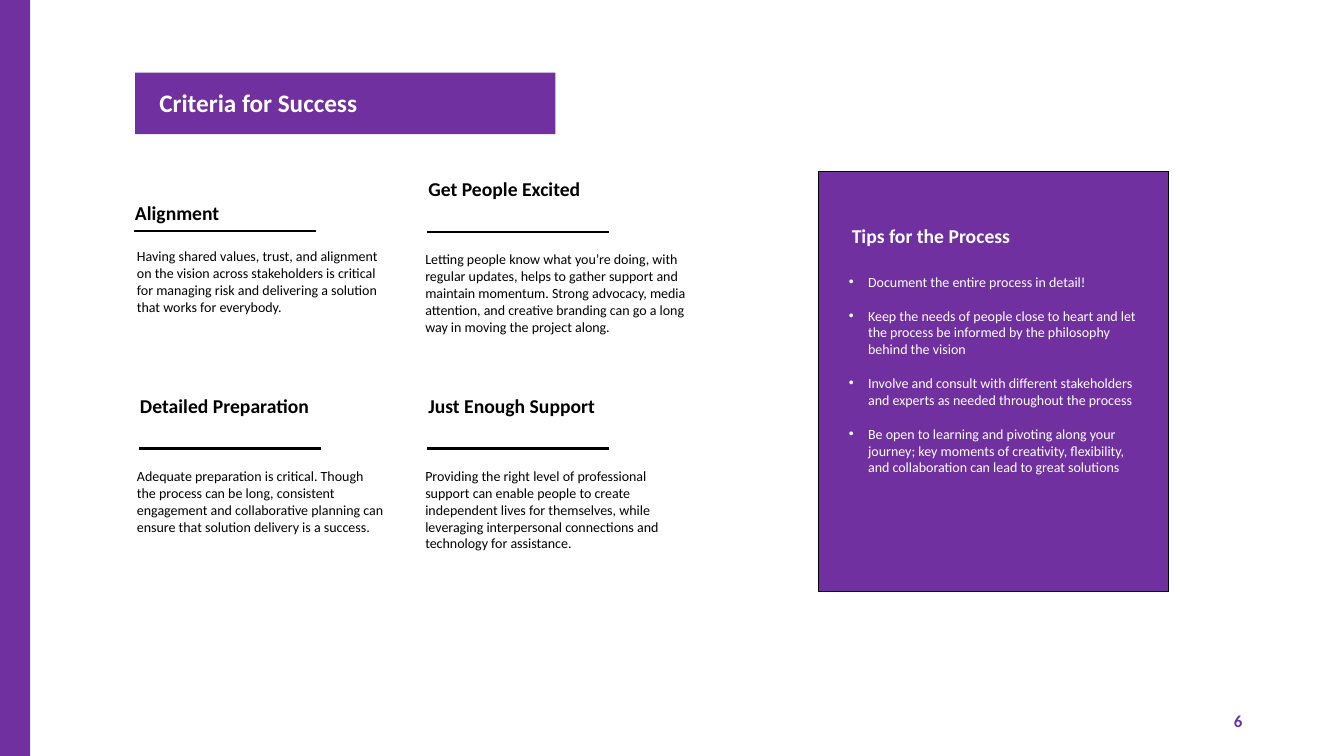
from dataclasses import dataclass

from lxml import etree
from pptx import Presentation
from pptx.dml.color import RGBColor
from pptx.enum.shapes import MSO_CONNECTOR, MSO_SHAPE
from pptx.enum.text import MSO_ANCHOR, MSO_AUTO_SIZE, PP_ALIGN
from pptx.oxml.ns import qn
from pptx.util import Pt

STRAIGHT = MSO_CONNECTOR.STRAIGHT
RECTANGLE = MSO_SHAPE.RECTANGLE
TOP, MIDDLE = MSO_ANCHOR.TOP, MSO_ANCHOR.MIDDLE
NO_FIT = MSO_AUTO_SIZE.NONE
LEFT, RIGHT = PP_ALIGN.LEFT, PP_ALIGN.RIGHT

PURPLE = RGBColor(0x70, 0x30, 0xA0)
WHITE = RGBColor(0xFF, 0xFF, 0xFF)
BLACK = RGBColor(0x00, 0x00, 0x00)

FONT = "Calibri"
EMU_PER_PX = 9144
RULE_LENGTH = 180
BULLET_INDENT = 19


@dataclass(frozen=True)
class Box:
    left: int
    top: int
    width: int
    height: int

    def emu(self) -> tuple[int, int, int, int]:
        return px(self.left), px(self.top), px(self.width), px(self.height)


@dataclass(frozen=True)
class Criterion:
    heading: str
    heading_box: Box
    rule_left: int
    rule_top: int
    detail: str
    detail_box: Box


CRITERIA = [
    Criterion(
        "Alignment", Box(124, 194, 200, 77), 133, 229,
        "Having shared values, trust, and alignment on the vision across "
        "stakeholders is critical for managing risk and delivering a solution "
        "that works for everybody.",
        Box(126, 241, 265, 94)),
    Criterion(
        "Get People Excited", Box(415, 171, 188, 57), 424, 230,
        "Letting people know what you’re doing, with regular updates, helps to "
        "gather support and maintain momentum. Strong advocacy, media "
        "attention, and creative branding can go a long way in moving the "
        "project along.",
        Box(412, 244, 286, 128)),
    Criterion(
        "Detailed Preparation", Box(129, 386, 200, 101), 138, 445,
        "Adequate preparation is critical. Though the process can be long, "
        "consistent engagement and collaborative planning can ensure that "
        "solution delivery is a success.",
        Box(126, 459, 265, 94)),
    Criterion(
        "Just Enough Support", Box(415, 386, 200, 101), 424, 445,
        "Providing the right level of professional support can enable people "
        "to create independent lives for themselves, while leveraging "
        "interpersonal connections and technology for assistance.",
        Box(412, 459, 286, 111)),
]

TIPS = [
    "Document the entire process in detail!",
    "Keep the needs of people close to heart and let the process be informed "
    "by the philosophy behind the vision",
    "Involve and consult with different stakeholders and experts as needed "
    "throughout the process",
    "Be open to learning and pivoting along your journey; key moments of "
    "creativity, flexibility, and collaboration can lead to great solutions",
]


def px(length: int) -> int:
    return length * EMU_PER_PX


def add_bullet(paragraph) -> None:
    properties = paragraph._p.get_or_add_pPr()
    properties.set("marL", str(px(BULLET_INDENT)))
    properties.set("indent", str(-px(BULLET_INDENT)))
    etree.SubElement(properties, qn("a:buFont")).set("typeface", "Arial")
    etree.SubElement(properties, qn("a:buChar")).set("char", "•")


def write_text(holder, lines: list[str], *, size: int, color: RGBColor = BLACK,
               bold: bool = False, align=LEFT, anchor=TOP,
               bulleted: bool = False, gap: float = 0) -> None:
    frame = holder.text_frame
    frame.word_wrap = True
    frame.auto_size = NO_FIT
    frame.vertical_anchor = anchor
    for index, line in enumerate(lines):
        paragraph = frame.add_paragraph() if index else frame.paragraphs[0]
        if bulleted:
            add_bullet(paragraph)
        paragraph.alignment = align
        paragraph.space_before = Pt(gap if index else 0)
        run = paragraph.add_run()
        run.text = line
        run.font.name = FONT
        run.font.size = Pt(size)
        run.font.bold = bold
        run.font.color.rgb = color


def add_panel(slide, box: Box, outlined: bool = False) -> None:
    panel = slide.shapes.add_shape(RECTANGLE, *box.emu())
    panel.shadow.inherit = False
    panel.fill.solid()
    panel.fill.fore_color.rgb = PURPLE
    if outlined:
        panel.line.color.rgb = BLACK
        panel.line.width = Pt(1)
    else:
        panel.line.fill.background()


def add_rule(slide, left: int, top: int) -> None:
    rule = slide.shapes.add_connector(
        STRAIGHT, px(left), px(top), px(left + RULE_LENGTH), px(top))
    rule.line.color.rgb = BLACK
    rule.line.width = Pt(1.75)
    etree.SubElement(rule.element.spPr, qn("a:effectLst"))


def add_label(slide, box: Box, text: str, **text_format) -> None:
    write_text(slide.shapes.add_textbox(*box.emu()), [text], **text_format)


def place_on_top(slide, placeholder, box: Box) -> None:
    (placeholder.left, placeholder.top,
     placeholder.width, placeholder.height) = box.emu()
    slide.shapes.element.append(placeholder.element)


def add_criterion(slide, criterion: Criterion) -> None:
    add_label(slide, criterion.heading_box, criterion.heading, size=14, bold=True)
    add_rule(slide, criterion.rule_left, criterion.rule_top)
    add_label(slide, criterion.detail_box, criterion.detail, size=10)


def main() -> None:
    deck = Presentation()
    deck.slide_width, deck.slide_height = px(1333), px(750)
    slide = deck.slides.add_slide(deck.slide_layouts[1])
    title, tips = slide.shapes.title, slide.placeholders[1]

    add_panel(slide, Box(134, 72, 417, 61))
    place_on_top(slide, title, Box(148, 82, 446, 41))
    write_text(title, ["Criteria for Success"], size=18, color=WHITE, bold=True)

    add_panel(slide, Box(-3, 0, 33, 750))
    add_panel(slide, Box(812, 170, 347, 417), outlined=True)

    for criterion in CRITERIA:
        add_criterion(slide, criterion)

    add_label(slide, Box(835, 217, 306, 77), "Tips for the Process",
              size=14, color=WHITE, bold=True)
    place_on_top(slide, tips, Box(832, 266, 309, 246))
    write_text(tips, TIPS, size=10, color=WHITE, bulleted=True, gap=12.2)

    add_label(slide, Box(942, 695, 300, 40), "6", size=12, color=PURPLE,
              bold=True, align=RIGHT, anchor=MIDDLE)
    deck.save("out.pptx")


if __name__ == "__main__":
    main()
